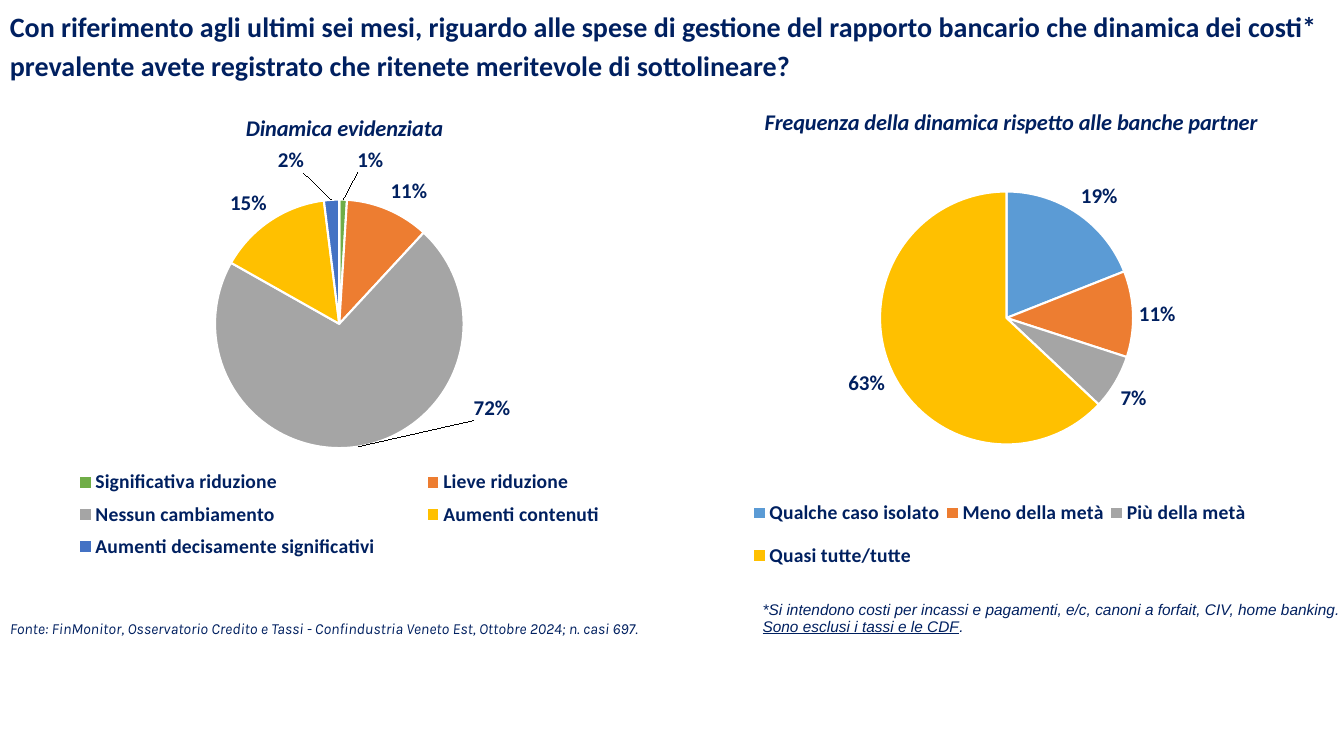
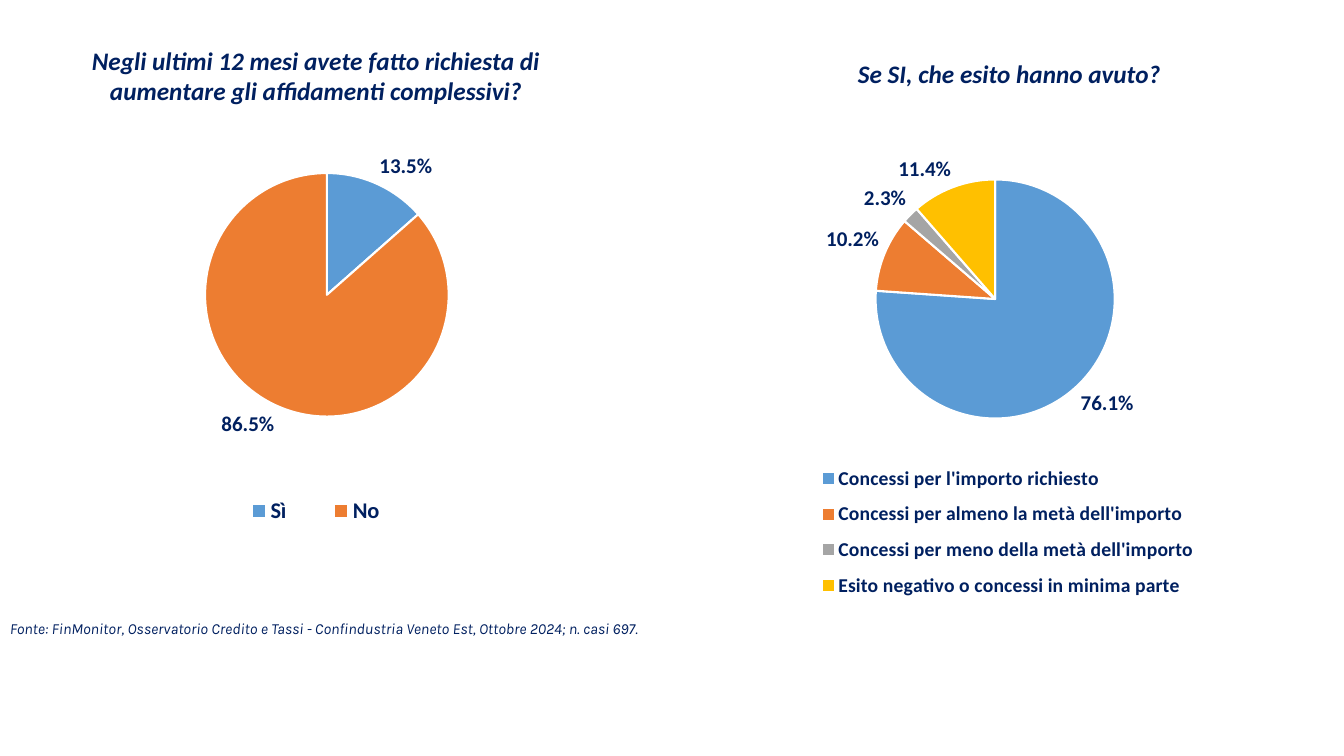
from lxml import etree
from pptx import Presentation
from pptx.chart.data import CategoryChartData
from pptx.dml.color import RGBColor
from pptx.enum.chart import XL_CHART_TYPE, XL_LABEL_POSITION, XL_LEGEND_POSITION
from pptx.oxml.ns import qn
from pptx.util import Inches, Pt

PIE = XL_CHART_TYPE.PIE
OUTSIDE = XL_LABEL_POSITION.OUTSIDE_END
BOTTOM = XL_LEGEND_POSITION.BOTTOM

# Shared look
WIDTH, HEIGHT = Inches(13.33), Inches(7.5)
NAVY, WHITE = "002060", "FFFFFF"
BLUE, ORANGE, GREY, YELLOW = "5B9BD5", "ED7D31", "A5A5A5", "FFC000"
GREEN, DARK_BLUE = "70AD47", "4472C4"
SOURCE = ("Fonte: FinMonitor, Osservatorio Credito e Tassi - Confindustria "
          "Veneto Est, Ottobre 2024; n. casi 697.")


def style(font, size, face="Calibri", bold=False, italic=False, color=NAVY):
    font.size, font.name = Pt(size), face
    font.bold, font.italic = bold, italic
    font.color.rgb = RGBColor.from_string(color)


def set_layout(parent, index, x, y, w=None, h=None, edge=True):
    """Place a chart part by shares of the chart; edge=False means an offset."""
    for old in parent.findall(qn("c:layout")):
        parent.remove(old)
    layout = etree.Element(qn("c:layout"))
    manual = etree.SubElement(layout, qn("c:manualLayout"))
    values = []
    if parent.tag == qn("c:plotArea"):
        values.append(("layoutTarget", "inner"))
    if edge:
        values += [("xMode", "edge"), ("yMode", "edge")]
    values += [("x", x), ("y", y)]
    if w is not None:
        values += [("w", w), ("h", h)]
    for tag, value in values:
        etree.SubElement(manual, qn("c:" + tag)).set("val", str(value))
    parent.insert(index, layout)


# Content: boxes are shares of the slide, inner places are shares of the chart
slides = [
    {
        "texts": [
            ((0, 0, 1, 0.11), 1.15, dict(size=20, bold=True),
             ["Con riferimento agli ultimi sei mesi, riguardo alle spese di gestione "
              "del rapporto bancario che dinamica dei costi* prevalente avete "
              "registrato che ritenete meritevole di sottolineare?"]),
            ((0.56, 0.79, 0.44, 0.06), 0.9, dict(size=11, face="Arial", italic=True),
             ["*Si intendono costi per incassi e pagamenti, e/c, canoni a forfait, "
              "CIV, home banking.", "Sono esclusi i tassi e le CDF."]),
        ],
        "format": "0%", "title_size": 16,
        "pies": [
            {
                "title": "Dinamica evidenziata", "title_at": (0.36, 0.03),
                "box": (0, 0.123, 0.5, 0.688),
                "plot": (0.32, 0.194, 0.37, 0.5),
                "legend": (0.05, 0.71, 0.91, 0.2), "legend_size": 14,
                "slices": [("Significativa riduzione", 0.01, GREEN),
                           ("Lieve riduzione", 0.11, ORANGE),
                           ("Nessun cambiamento", 0.72, GREY),
                           ("Aumenti contenuti", 0.15, YELLOW),
                           ("Aumenti decisamente significativi", 0.02, DARK_BLUE)],
                "moved_labels": {0: (0.04, -0.04), 2: (0.17, -0.11), 4: (-0.06, -0.04)},
            },
            {
                "title": "Frequenza della dinamica rispetto alle banche partner",
                "title_at": (0.17, 0.01),
                "box": (0.477, 0.129, 0.523, 0.688),
                "plot": (0.34, 0.174, 0.36, 0.5),
                "legend": (0.15, 0.74, 0.72, 0.2), "legend_size": 14,
                "slices": [("Qualche caso isolato", 0.19, BLUE),
                           ("Meno della metà", 0.11, ORANGE),
                           ("Più della metà", 0.07, GREY),
                           ("Quasi tutte/tutte", 0.63, YELLOW)],
            },
        ],
    },
    {
        "texts": [],
        "format": "0.0%", "title_size": 18,
        "pies": [
            {
                "title": "Negli ultimi 12 mesi avete fatto richiesta di "
                         "aumentare gli affidamenti complessivi?",
                "title_at": (0.13, 0.06),
                "box": (0, 0, 0.5, 0.848),
                "plot": (0.305, 0.27, 0.363, 0.38),
                "legend": (0.315, 0.757, 0.31, 0.08), "legend_size": 16,
                "slices": [("Sì", 0.135, BLUE), ("No", 0.865, ORANGE)],
            },
            {
                "title": "Se SI, che esito hanno avuto?", "title_at": (0.27, 0.08),
                "box": (0.5, 0, 0.5, 0.848),
                "plot": (0.303, 0.28, 0.356, 0.373),
                "legend": (0.21, 0.71, 0.58, 0.24), "legend_size": 14,
                "slices": [("Concessi per l'importo richiesto", 0.761, BLUE),
                           ("Concessi per almeno la metà dell'importo", 0.102, ORANGE),
                           ("Concessi per meno della metà dell'importo", 0.023, GREY),
                           ("Esito negativo o concessi in minima parte", 0.114, YELLOW)],
            },
        ],
    },
]
source_line = ((0, 0.812, 0.523, 0.04), 1.0,
               dict(size=11, face="Karla", italic=True), [SOURCE])

prs = Presentation()
prs.slide_width, prs.slide_height = WIDTH, HEIGHT

for content in slides:
    slide = prs.slides.add_slide(prs.slide_layouts[6])

    # Pies
    for pie in content["pies"]:
        names, shares, colors = zip(*pie["slices"])
        data = CategoryChartData(number_format=content["format"])
        data.categories = names
        data.add_series("Quota", shares)
        x, y, w, h = pie["box"]
        chart = slide.shapes.add_chart(PIE, int(x * WIDTH), int(y * HEIGHT),
                                       int(w * WIDTH), int(h * HEIGHT), data).chart
        style(chart.font, 12)
        set_layout(chart._chartSpace.find(".//" + qn("c:plotArea")), 0, *pie["plot"])

        # Heading and legend
        chart.has_title = True
        heading = chart.chart_title.text_frame
        heading.text = pie["title"]
        style(heading.paragraphs[0].runs[0].font, content["title_size"],
              bold=True, italic=True)
        set_layout(chart.chart_title._element, 1, *pie["title_at"])
        chart.has_legend = True
        chart.legend.position = BOTTOM
        chart.legend.include_in_layout = False
        style(chart.legend.font, pie["legend_size"], bold=True)
        set_layout(chart.legend._element, 1, *pie["legend"])

        # Slices
        chart.plots[0].vary_by_categories = True
        series = chart.plots[0].series[0]
        for i, color in enumerate(colors):
            look = series.points[i].format
            look.fill.solid()
            look.fill.fore_color.rgb = RGBColor.from_string(color)
            look.line.color.rgb = RGBColor.from_string(WHITE)
            look.line.width = Pt(1.5)

        # Value labels, some pulled away from their slice
        labels = series.data_labels
        labels.show_value = True
        labels.number_format = content["format"]
        labels.number_format_is_linked = False
        labels.position = OUTSIDE
        style(labels.font, 15, bold=True)
        for i, offset in pie.get("moved_labels", {}).items():
            label = series.points[i].data_label
            label.position = OUTSIDE
            style(label.font, 15, bold=True)
            element = labels._element.xpath(f"c:dLbl[c:idx/@val='{i}']")[0]
            set_layout(element, 1, *offset, edge=False)
            number = etree.Element(qn("c:numFmt"), formatCode=content["format"],
                                   sourceLinked="0")
            element.insert(2, number)

    # Question, footnote and source
    for (x, y, w, h), spacing, look, lines in content["texts"] + [source_line]:
        frame = slide.shapes.add_textbox(int(x * WIDTH), int(y * HEIGHT),
                                         int(w * WIDTH), int(h * HEIGHT)).text_frame
        frame.word_wrap = True
        frame.margin_right = 0
        frame.text = "\n".join(lines)
        for paragraph in frame.paragraphs:
            paragraph.line_spacing = spacing
            if paragraph.text.startswith("Sono esclusi"):
                paragraph.text = paragraph.text.rstrip(".")
                paragraph.runs[0].font.underline = True
                paragraph.add_run().text = "."
            for run in paragraph.runs:
                style(run.font, **look)

prs.save("out.pptx")
